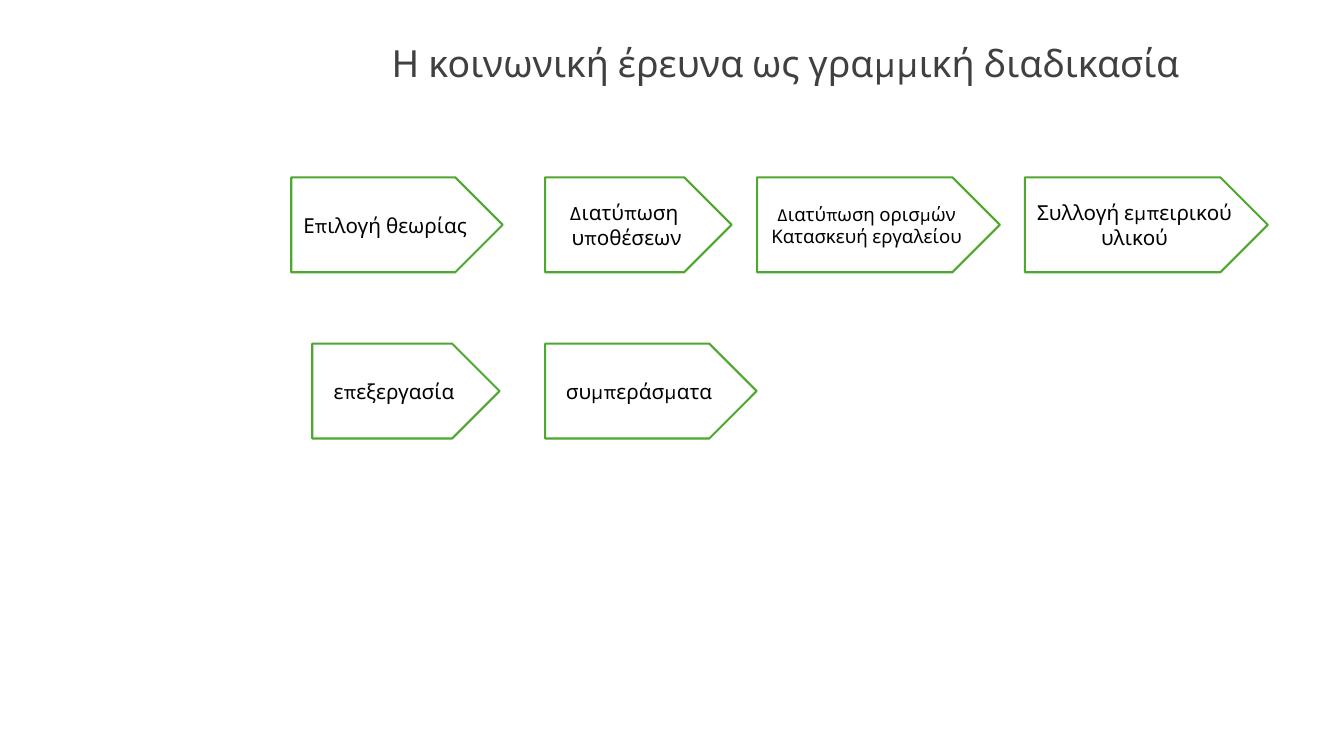
from pptx import Presentation
from pptx import util as u
from pptx.dml.color import RGBColor
from pptx.enum import shapes, text

COLORS = {"title": "404040", "text": "000000", "fill": "FFFFFF", "line": "4EA72E"}
FONT = "Karla"


def write(shape, words, size, color, spacing=1.0):
    """Fill a shape with centred text, one paragraph per line."""
    frame = shape.text_frame
    frame.text = words
    frame.word_wrap = True
    frame.auto_size = text.MSO_AUTO_SIZE.NONE
    frame.vertical_anchor = text.MSO_ANCHOR.MIDDLE
    for para in frame.paragraphs:
        para.alignment = text.PP_ALIGN.CENTER
        para.line_spacing = spacing
        para.font.size = u.Pt(size)
        para.font.name = FONT
        para.font.color.rgb = RGBColor.from_string(COLORS[color])


deck = Presentation()
deck.slide_width, deck.slide_height = u.Cm(33.87), u.Cm(19.05)
slide = deck.slides.add_slide(deck.slide_layouts[5])

title = slide.shapes.title
title.left, title.top = u.Cm(5.74), u.Cm(0)
title.width, title.height = u.Cm(28.13), u.Cm(3.28)
write(title, "Η κοινωνική έρευνα ως γραμμική διαδικασία", 26.7, "title", spacing=0.9)

# Each row: top, then steps as left, width, size, words
HEIGHT = 2.39
rows = [
    (4.47, [
        (7.34, 5.33, 14.7, "Επιλογή θεωρίας"),
        (13.74, 4.7, 14.7, "Διατύπωση \nυποθέσεων"),
        (19.08, 6.12, 13.3, "Διατύπωση ορισμών\nΚατασκευή εργαλείου"),
        (25.83, 6.12, 14.7, "Συλλογή εμπειρικού υλικού"),
    ]),
    (8.66, [
        (7.87, 4.72, 14.7, "επεξεργασία"),
        (13.74, 5.33, 14.7, "συμπεράσματα"),
    ]),
]
for top, steps in rows:
    for left, width, size, words in steps:
        step = slide.shapes.add_shape(
            shapes.MSO_SHAPE.PENTAGON, u.Cm(left), u.Cm(top), u.Cm(width), u.Cm(HEIGHT))
        step.shadow.inherit = False
        step.fill.solid()
        step.fill.fore_color.rgb = RGBColor.from_string(COLORS["fill"])
        step.line.color.rgb = RGBColor.from_string(COLORS["line"])
        step.line.width = u.Pt(1.5)
        write(step, words, size, "text")

deck.save("out.pptx")
